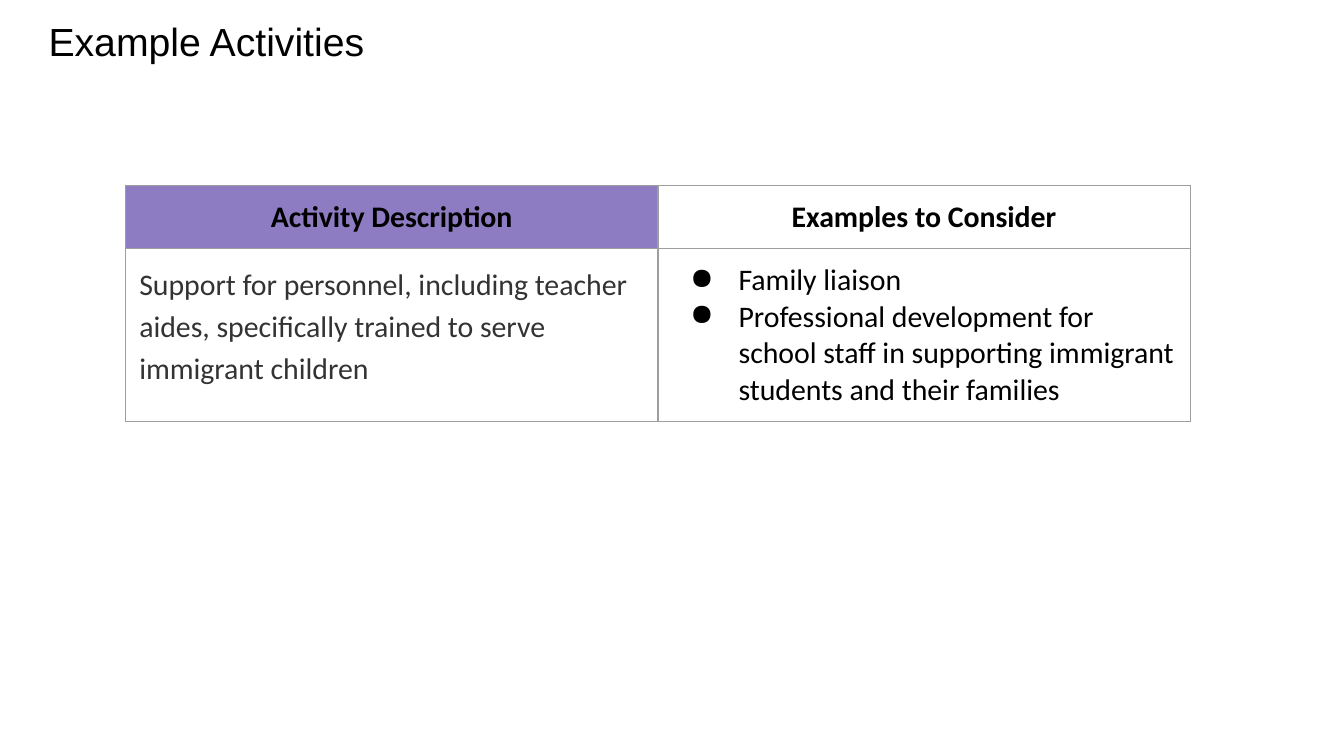
"""Build the Example Activities slide: a title above a two-column table."""
from dataclasses import dataclass, field

import lxml.etree
import pptx
import pptx.dml.color
import pptx.enum.text
import pptx.oxml.ns
import pptx.util

Pt = pptx.util.Pt
Align = pptx.enum.text.PP_ALIGN
qn = pptx.oxml.ns.qn


@dataclass(frozen=True)
class Theme:
    ink: str = "000000"
    gray: str = "333333"
    violet: str = "8E7CC3"
    rule: str = "9E9E9E"
    head: str = "Arial"
    body: str = "Calibri"
    large: float = 21
    text: float = 16


@dataclass(frozen=True)
class Entry:
    lines: tuple[str, ...]
    fill: str | None = None
    style: dict = field(default_factory=dict)


THEME = Theme()
HEAD = {"bold": True, "align": Align.CENTER}
ROWS = (
    (
        Entry(("Activity Description",), THEME.violet, HEAD),
        Entry(("Examples to Consider",), style=HEAD),
    ),
    (
        Entry(
            ("Support for personnel, including teacher aides, "
             "specifically trained to serve immigrant children",),
            style={"color": THEME.gray, "space": 1.15, "after": 12},
        ),
        Entry(
            ("Family liaison",
             "Professional development for school staff in supporting "
             "immigrant students and their families"),
            style={"bullet": "●"},
        ),
    ),
)


def rgb(code: str):
    return pptx.dml.color.RGBColor.from_string(code)


def paint(parent, code: str) -> None:
    lxml.etree.SubElement(parent, qn("a:srgbClr"), val=code)


def mark(para, char: str) -> None:
    props = para._p.get_or_add_pPr()
    props.set("marL", str(Pt(36)))
    props.set("indent", str(-Pt(26)))
    paint(lxml.etree.SubElement(props, qn("a:buClr")), THEME.ink)
    lxml.etree.SubElement(props, qn("a:buChar"), char=char)


def write(para, text: str, *, face: str = THEME.body, size: float = THEME.text,
          color: str = THEME.ink, bold: bool = False, align=Align.LEFT,
          space: float = 1.0, after: float = 0, bullet: str = "") -> None:
    if bullet:
        mark(para, bullet)
    para.alignment = align
    para.line_spacing = space
    para.space_before = Pt(0)
    para.space_after = Pt(after)
    run = para.add_run()
    run.text = text
    run.font.name = face
    run.font.size = Pt(size)
    run.font.bold = bold
    run.font.color.rgb = rgb(color)


def inset(box, gap: float) -> None:
    box.margin_left = box.margin_top = Pt(gap)
    box.margin_right = box.margin_bottom = Pt(gap)


def border(cell) -> None:
    props = cell._tc.get_or_add_tcPr()
    for spot, side in enumerate(("lnL", "lnR", "lnT", "lnB")):
        line = lxml.etree.Element(qn(f"a:{side}"), w=str(Pt(0.75)))
        paint(lxml.etree.SubElement(line, qn("a:solidFill")), THEME.rule)
        props.insert(spot, line)


def draw_cell(cell, entry: Entry) -> None:
    inset(cell, 7.2)
    if entry.fill:
        cell.fill.solid()
        cell.fill.fore_color.rgb = rgb(entry.fill)
    else:
        cell.fill.background()
    border(cell)
    frame = cell.text_frame
    for spot, text in enumerate(entry.lines):
        para = frame.add_paragraph() if spot else frame.paragraphs[0]
        write(para, text, **entry.style)


def draw_table(slide, rows: tuple[tuple[Entry, ...], ...]) -> None:
    table = slide.shapes.add_table(
        len(rows), len(rows[0]), Pt(67.4), Pt(99.2), Pt(570.2), Pt(60.4)
    ).table
    table.first_row = table.horz_banding = False
    for r, row in enumerate(rows):
        for c, entry in enumerate(row):
            draw_cell(table.cell(r, c), entry)


def draw_title(slide, text: str) -> None:
    title = slide.shapes.title
    title.left, title.top = Pt(26), Pt(12.2)
    title.width, title.height = Pt(476.6), Pt(53.3)
    frame = title.text_frame
    inset(frame, 0)
    frame.word_wrap = True
    frame.auto_size = pptx.enum.text.MSO_AUTO_SIZE.NONE
    frame.vertical_anchor = pptx.enum.text.MSO_ANCHOR.TOP
    write(frame.paragraphs[0], text, face=THEME.head, size=THEME.large, space=0.9)


def main() -> None:
    deck = pptx.Presentation()
    deck.slide_width, deck.slide_height = Pt(720), Pt(405)
    slide = deck.slides.add_slide(deck.slide_layouts[5])
    draw_title(slide, "Example Activities")
    draw_table(slide, ROWS)
    deck.save("out.pptx")


if __name__ == "__main__":
    main()
